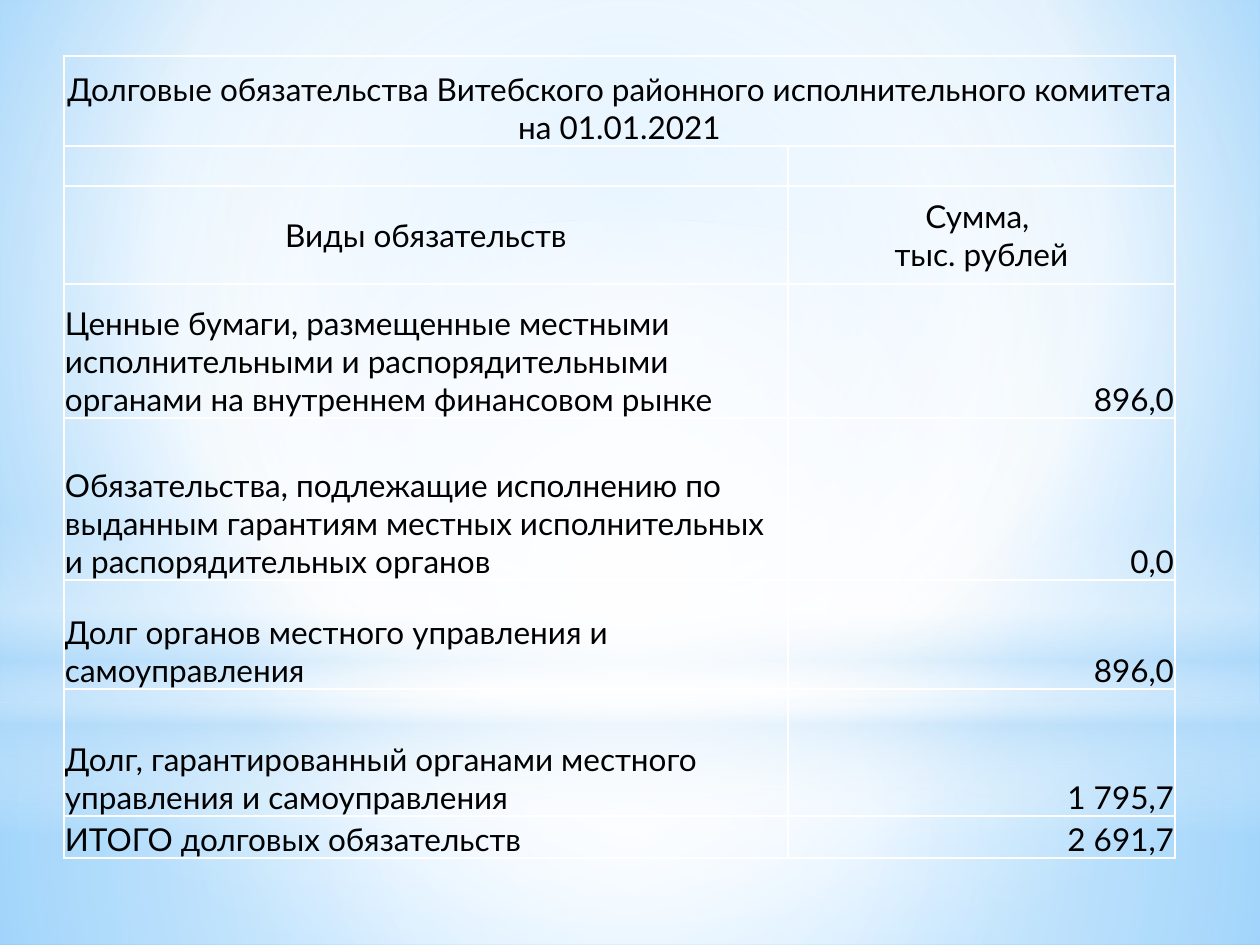
from lxml import etree
from pptx import Presentation, util as u
from pptx.dml.color import RGBColor
from pptx.enum import shapes, text
from pptx.oxml import ns

WHITE = RGBColor(0xFF, 0xFF, 0xFF)
BLACK = RGBColor(0x00, 0x00, 0x00)
PALE_BLUE = RGBColor(0xB4, 0xDC, 0xFA)
SKY = RGBColor(0x9E, 0xD5, 0xFF)
DEEP_SKY = RGBColor(0x5B, 0xB9, 0xFF)

CENTER, LEFT, RIGHT = text.PP_ALIGN.CENTER, text.PP_ALIGN.LEFT, text.PP_ALIGN.RIGHT
MIDDLE, BOTTOM = text.MSO_ANCHOR.MIDDLE, text.MSO_ANCHOR.BOTTOM

TITLE = "Долговые обязательства Витебского районного исполнительного комитета на 01.01.2021"
HEADINGS = ("Виды обязательств", "Сумма, \vтыс. рублей")
DEBTS = [
    ("Ценные бумаги, размещенные местными исполнительными и распорядительными "
     "органами на внутреннем финансовом рынке", "896,0"),
    ("Обязательства, подлежащие исполнению по выданным гарантиям местных "
     "исполнительных и распорядительных органов", "0,0"),
    ("Долг органов местного управления и самоуправления", "896,0"),
    ("Долг, гарантированный органами местного управления и самоуправления", "1 795,7"),
    ("ИТОГО долговых обязательств", "2 691,7"),
]


def px(length):
    return u.Emu(round(length * 914400 / 126))


def add_xml(parent, tag, **attributes):
    values = {key: str(value) for key, value in attributes.items()}
    return etree.SubElement(parent, ns.qn(tag), values)


class DebtSlide:
    """Draws the debt slide in one style, with lengths in px."""

    font = "Lato"
    size = u.Pt(18)

    def __init__(self, deck):
        self.slide = deck.slides.add_slide(deck.slide_layouts[6])

    def gradient(self, fill, owner, stops, focus=None):
        fill.gradient()
        grad = owner.xpath(".//a:gradFill")[0]
        for child in list(grad):
            grad.remove(child)
        stop_list = add_xml(grad, "a:gsLst")
        for position, color, opacity in stops:
            stop = add_xml(stop_list, "a:gs", pos=position * 1000)
            tint = add_xml(stop, "a:srgbClr", val=color)
            if opacity < 100:
                add_xml(tint, "a:alpha", val=opacity * 1000)
        if focus:
            radial = add_xml(grad, "a:path", path="circle")
            sides = {side: share * 1000 for side, share in zip("ltrb", focus)}
            add_xml(radial, "a:fillToRect", **sides)
        else:
            add_xml(grad, "a:lin", ang=5400000, scaled=0)

    def background(self, stops, focus):
        self.gradient(self.slide.background.fill, self.slide.element, stops, focus)

    def glow(self, kind, top, height, stops, focus=None):
        glow = self.slide.shapes.add_shape(kind, 0, px(top), px(1260), px(height))
        glow.shadow.inherit = False
        glow.line.fill.background()
        self.gradient(glow.fill, glow.element, stops, focus)

    def table(self, left, top, widths, heights):
        frame = self.slide.shapes.add_table(
            len(heights), len(widths), px(left), px(top), px(sum(widths)), px(sum(heights)))
        table = frame.table
        table.first_row = table.horz_banding = False
        for column, width in zip(table.columns, widths):
            column.width = px(width)
        for row, height in zip(table.rows, heights):
            row.height = px(height)
        for cell in table.iter_cells():
            self.frame_cell(cell)
        return table

    def frame_cell(self, cell):
        cell.margin_left = cell.margin_top = cell.margin_right = px(1)
        cell.margin_bottom = 0
        cell.fill.background()
        properties = cell._tc.get_or_add_tcPr()
        for index, tag in enumerate(("a:lnL", "a:lnR", "a:lnT", "a:lnB")):
            border = add_xml(properties, tag, w=u.Pt(1))
            add_xml(add_xml(border, "a:solidFill"), "a:srgbClr", val=WHITE)
            properties.insert(index, border)

    def label(self, cell, wording, align, anchor=BOTTOM):
        cell.vertical_anchor = anchor
        cell.text_frame.text = wording
        paragraph = cell.text_frame.paragraphs[0]
        paragraph.alignment = align
        for run in paragraph.runs:
            run.font.name = self.font
            run.font.size = self.size
            run.font.color.rgb = BLACK


def main():
    deck = Presentation()
    deck.slide_width, deck.slide_height = px(1260), px(945)
    page = DebtSlide(deck)

    rectangle, oval = shapes.MSO_SHAPE.RECTANGLE, shapes.MSO_SHAPE.OVAL
    middle = (50, 50, 50, 50)
    page.background([(0, SKY, 100), (60, WHITE, 100), (100, DEEP_SKY, 100)], (20, 10, 20, 60))
    page.glow(rectangle, 703, 242,
              [(0, WHITE, 91), (37, WHITE, 76), (100, PALE_BLUE, 79)], middle)
    page.glow(rectangle, 0, 703,
              [(0, WHITE, 89), (48, WHITE, 62), (100, PALE_BLUE, 79)], middle)
    page.glow(rectangle, 519, 315,
              [(0, WHITE, 0), (29, WHITE, 30), (45, PALE_BLUE, 40),
               (55, WHITE, 26), (65, PALE_BLUE, 60), (100, WHITE, 0)])
    page.glow(oval, 220, 703, [(0, WHITE, 100), (56, WHITE, 0)], middle)

    debts = page.table(64, 56, (724, 387), (90, 40, 98, 134, 162, 109, 127, 42))
    debts.cell(0, 0).merge(debts.cell(0, 1))
    page.label(debts.cell(0, 0), TITLE, CENTER)
    for column, heading in enumerate(HEADINGS):
        page.label(debts.cell(2, column), heading, CENTER, MIDDLE)
    for row, (obligation, amount) in enumerate(DEBTS, start=3):
        page.label(debts.cell(row, 0), obligation, LEFT)
        page.label(debts.cell(row, 1), amount, RIGHT)

    deck.save("out.pptx")


if __name__ == "__main__":
    main()
